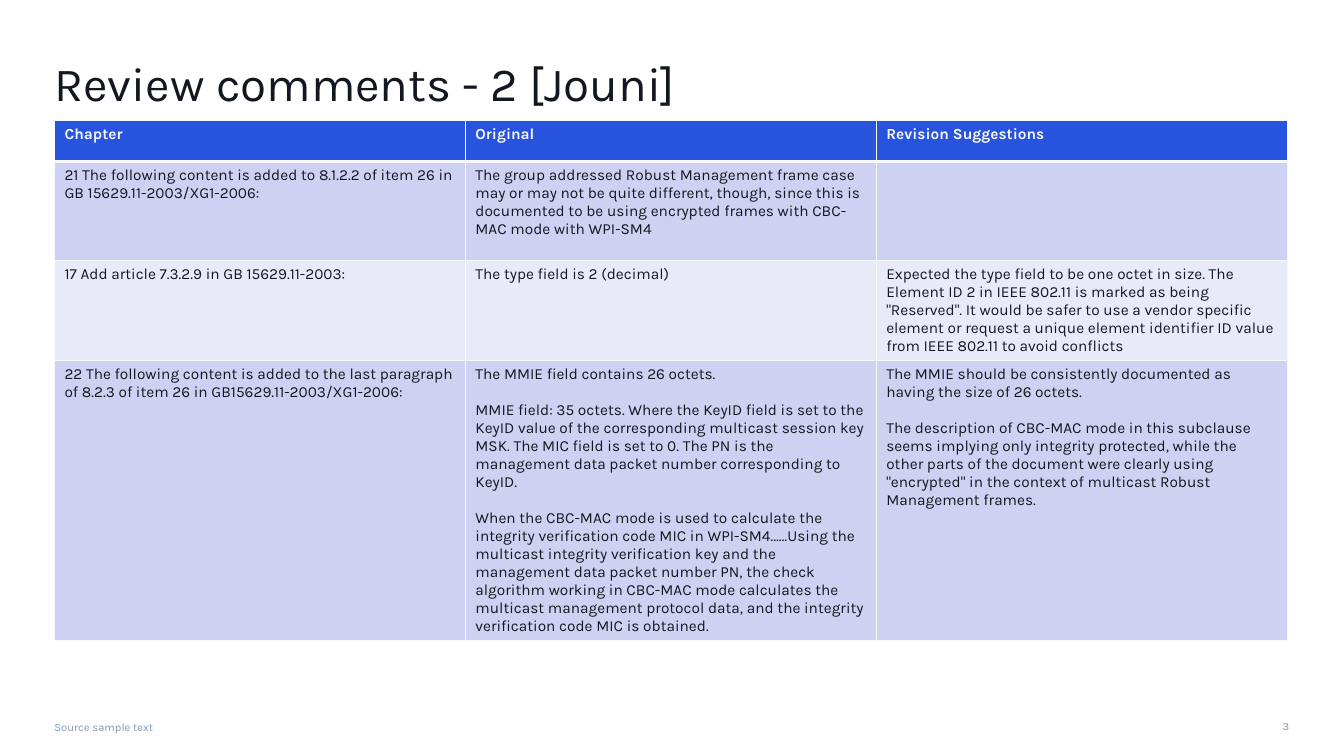
from dataclasses import dataclass

from lxml.etree import SubElement
from pptx import Presentation
from pptx.dml.color import RGBColor
from pptx.enum.text import MSO_ANCHOR, PP_ALIGN
from pptx.oxml.ns import qn
from pptx.slide import Slide
from pptx.table import _Cell
from pptx.text.text import TextFrame, _Paragraph
from pptx.util import Pt

FONT = "Karla"
INK, MUTED, PALE = "13171F", "8498B8", "F7F8FA"
HEADER_FILL = "2853DC"
BAND_FILLS = ("CDD1F2", "E8E9F9")
LEFT, TABLE_TOP, WIDTH = 38.9, 85.8, 880.5
HEADER_HEIGHT = 29.5
PARAGRAPH_GAP = 12.8


@dataclass(frozen=True)
class Comment:
    """One table row; each column is a list of paragraphs."""
    height: float
    chapter: tuple[str, ...]
    original: tuple[str, ...]
    suggestion: tuple[str, ...] = ()


@dataclass(frozen=True)
class FooterItem:
    text: str
    left: float
    top: float
    width: float
    height: float
    align: PP_ALIGN
    line_spacing: float
    space_after: float
    wrap: bool


HEADINGS = ("Chapter", "Original", "Revision Suggestions")
COMMENTS = (
    Comment(
        71,
        ("21 The following content is added to 8.1.2.2 of item 26 in "
         "GB 15629.11-2003/XG1-2006:",),
        ("The group addressed Robust Management frame case may or may not be quite "
         "different, though, since this is documented to be using encrypted frames "
         "with CBC-MAC mode with WPI-SM4",),
    ),
    Comment(
        71.4,
        ("17 Add article 7.3.2.9 in GB 15629.11-2003:",),
        ("The type field is 2 (decimal)",),
        ("Expected the type field to be one octet in size. The Element ID 2 in "
         "IEEE 802.11 is marked as being \"Reserved\". It would be safer to use a "
         "vendor specific element or request a unique element identifier ID value "
         "from IEEE 802.11 to avoid conflicts",),
    ),
    Comment(
        199.7,
        ("22 The following content is added to the last paragraph of 8.2.3 of "
         "item 26 in GB15629.11-2003/XG1-2006:",),
        ("The MMIE field contains 26 octets.",
         "MMIE field: 35 octets. Where the KeyID field is set to the KeyID value of "
         "the corresponding multicast session key MSK. The MIC field is set to 0. "
         "The PN is the management data packet number corresponding to KeyID.",
         "When the CBC-MAC mode is used to calculate the integrity verification code "
         "MIC in WPI-SM4……Using the multicast integrity verification key and the "
         "management data packet number PN, the check algorithm working in CBC-MAC "
         "mode calculates the multicast management protocol data, and the integrity "
         "verification code MIC is obtained."),
        ("The MMIE should be consistently documented as having the size of 26 octets.",
         "The description of CBC-MAC mode in this subclause seems implying only "
         "integrity protected, while the other parts of the document were clearly "
         "using \"encrypted\" in the context of multicast Robust Management frames."),
    ),
)
FOOTER = (
    FooterItem("Source sample text", LEFT, 514.8, 825.8, 9.4,
               PP_ALIGN.LEFT, 0.96, 2.2, True),
    FooterItem("3", 910.8, 512.6, 10.1, 10.8, PP_ALIGN.RIGHT, 1.25, 0, False),
)


def color(value: str) -> RGBColor:
    return RGBColor.from_string(value)


def add_span(para: _Paragraph, text: str, size: float, ink: str,
             bold: bool = False) -> None:
    span = para.add_run()
    span.text = text
    span.font.name = FONT
    span.font.size = Pt(size)
    span.font.bold = bold
    span.font.color.rgb = color(ink)


def prepare_frame(frame: TextFrame, wrap: bool = True) -> None:
    """Remove the insets and anchor the text to the bottom."""
    frame.margin_left = frame.margin_right = Pt(0)
    frame.margin_top = frame.margin_bottom = Pt(0)
    frame.vertical_anchor = MSO_ANCHOR.BOTTOM
    frame.word_wrap = wrap


def set_borders(cell: _Cell, top: float, bottom: float) -> None:
    properties = cell._tc.get_or_add_tcPr()
    for side, width in (("L", 1), ("R", 1), ("T", top), ("B", bottom)):
        line = SubElement(properties, qn(f"a:ln{side}"), w=str(Pt(width)))
        fill = SubElement(line, qn("a:solidFill"))
        SubElement(fill, qn("a:srgbClr"), val=PALE)


def fill_cell(cell: _Cell, paragraphs: tuple[str, ...], row: int) -> None:
    is_header = row == 0
    set_borders(cell, top=3 if row == 1 else 1, bottom=3 if is_header else 1)
    cell.fill.solid()
    cell.fill.fore_color.rgb = color(
        HEADER_FILL if is_header else BAND_FILLS[(row - 1) % 2])
    frame = cell.text_frame
    frame.paragraphs[0].font.size = Pt(11)
    for index, text in enumerate(paragraphs):
        para = frame.add_paragraph() if index else frame.paragraphs[0]
        para.space_before = Pt(PARAGRAPH_GAP if index else 0)
        add_span(para, text, 11, PALE if is_header else INK, is_header)


def add_title(page: Slide, text: str) -> None:
    title = page.shapes.title
    title.left, title.top = Pt(LEFT), Pt(44.6)
    title.width, title.height = Pt(WIDTH), Pt(34.6)
    prepare_frame(title.text_frame)
    para = title.text_frame.paragraphs[0]
    para.alignment = PP_ALIGN.LEFT
    para.line_spacing = 0.84
    add_span(para, text, 34, INK)


def add_comment_table(page: Slide) -> None:
    heights = [HEADER_HEIGHT] + [comment.height for comment in COMMENTS]
    rows = [tuple((heading,) for heading in HEADINGS)]
    rows += [(item.chapter, item.original, item.suggestion) for item in COMMENTS]
    table = page.shapes.add_table(
        len(rows), len(HEADINGS), Pt(LEFT), Pt(TABLE_TOP),
        Pt(WIDTH), Pt(sum(heights))).table
    for column in table.columns:
        column.width = Pt(WIDTH / len(HEADINGS))
    for row, (height, contents) in enumerate(zip(heights, rows)):
        table.rows[row].height = Pt(height)
        for column, paragraphs in enumerate(contents):
            fill_cell(table.cell(row, column), paragraphs, row)


def add_footer_item(page: Slide, item: FooterItem) -> None:
    box = page.shapes.add_textbox(
        Pt(item.left), Pt(item.top), Pt(item.width), Pt(item.height))
    prepare_frame(box.text_frame, item.wrap)
    para = box.text_frame.paragraphs[0]
    para.alignment = item.align
    para.line_spacing = item.line_spacing
    para.space_after = Pt(item.space_after)
    add_span(para, item.text, 8, MUTED)


def main() -> None:
    deck = Presentation()
    deck.slide_width, deck.slide_height = Pt(960), Pt(540)
    page = deck.slides.add_slide(deck.slide_layouts.get_by_name("Title Only"))
    add_title(page, "Review comments - 2 [Jouni]")
    add_comment_table(page)
    for item in FOOTER:
        add_footer_item(page, item)
    deck.save("out.pptx")


if __name__ == "__main__":
    main()
